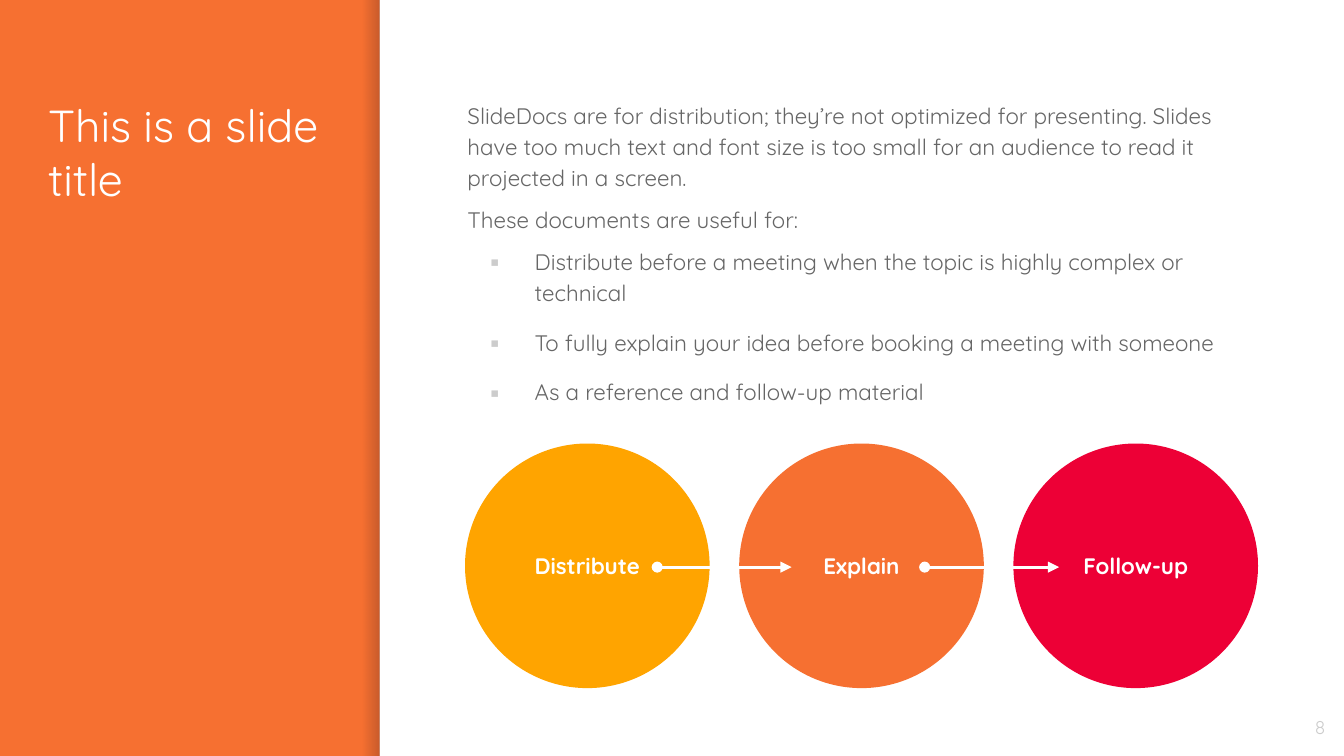
import dataclasses

import lxml.etree
import pptx
import pptx.dml.color
import pptx.enum.shapes
import pptx.enum.text
import pptx.oxml.ns
import pptx.util

EMU_PER_PX = 4572
SLIDE_WIDTH, SLIDE_HEIGHT = 2000, 1125


@dataclasses.dataclass(frozen=True)
class Theme:
    font: str = "Quicksand"
    orange: str = "F67031"
    amber: str = "FFA400"
    red: str = "ED0036"
    white: str = "FFFFFF"
    grey: str = "666666"
    pale: str = "CCCCCC"
    shade: str = "000014"
    title_size: int = 24
    body_size: int = 12
    number_size: int = 10
    line_width: float = 1.5


THEME = Theme()
ALIGN = pptx.enum.text.PP_ALIGN
ANCHOR = pptx.enum.text.MSO_ANCHOR
SHAPE = pptx.enum.shapes.MSO_SHAPE


def px(length):
    return pptx.util.Emu(length * EMU_PER_PX)


def rgb(color):
    return pptx.dml.color.RGBColor.from_string(color)


def add_xml(parent, tag, **attributes):
    element = lxml.etree.SubElement(parent, pptx.oxml.ns.qn(tag))
    for name, value in attributes.items():
        element.set(name, str(value))
    return element


def add_shape(slide, kind, box, color):
    shape = slide.shapes.add_shape(kind, *map(px, box))
    shape.shadow.inherit = False
    shape.line.fill.background()
    shape.fill.solid()
    shape.fill.fore_color.rgb = rgb(color)
    return shape


def prepare_frame(shape, anchor):
    frame = shape.text_frame
    frame.word_wrap = True
    frame.vertical_anchor = anchor
    frame.margin_left = frame.margin_right = px(20)
    frame.margin_top = frame.margin_bottom = px(20)
    return frame


def add_run(paragraph, text, size, color, bold=False):
    run = paragraph.add_run()
    run.text = text
    run.font.name = THEME.font
    run.font.size = pptx.util.Pt(size)
    run.font.bold = bold
    run.font.color.rgb = rgb(color)


def add_text(slide, box, text, size, color, align=ALIGN.LEFT, anchor=ANCHOR.TOP):
    frame = prepare_frame(slide.shapes.add_textbox(*map(px, box)), anchor)
    paragraph = frame.paragraphs[0]
    paragraph.alignment = align
    add_run(paragraph, text, size, color)


def add_bullet(paragraph):
    properties = paragraph._p.get_or_add_pPr()
    properties.set("marL", str(px(100)))
    properties.set("indent", str(px(-66)))
    bullet_color = add_xml(properties, "a:buClr")
    add_xml(bullet_color, "a:srgbClr", val=THEME.pale)
    add_xml(properties, "a:buFont", typeface=THEME.font)
    add_xml(properties, "a:buChar", char="▪")


def add_panel(slide, box):
    left, top, width, height = box
    add_shape(slide, SHAPE.RECTANGLE, box, THEME.white)
    edge = add_shape(slide, SHAPE.RECTANGLE, (left - 25, top, 25, height), THEME.shade)
    edge.fill.gradient()
    edge.fill.gradient_angle = 0
    for stop, opacity in zip(edge.fill.gradient_stops, (0, 20)):
        stop.color.rgb = rgb(THEME.shade)
        color = stop._gs.find(pptx.oxml.ns.qn("a:srgbClr"))
        add_xml(color, "a:alpha", val=opacity * 1000)


def add_body(slide, box, paragraphs):
    frame = prepare_frame(slide.shapes.add_textbox(*map(px, box)), ANCHOR.TOP)
    for index, (text, bulleted, before, after) in enumerate(paragraphs):
        paragraph = frame.add_paragraph() if index else frame.paragraphs[0]
        paragraph.line_spacing = 1.15
        paragraph.space_before = pptx.util.Pt(before)
        paragraph.space_after = pptx.util.Pt(after)
        if bulleted:
            add_bullet(paragraph)
        add_run(paragraph, text, THEME.body_size, THEME.grey)


def add_arrow(slide, left, top, length):
    arrow = slide.shapes.add_connector(
        pptx.enum.shapes.MSO_CONNECTOR.STRAIGHT,
        px(left), px(top), px(left + length), px(top),
    )
    arrow.line.color.rgb = rgb(THEME.white)
    arrow.line.width = pptx.util.Pt(THEME.line_width)
    line = arrow.line._get_or_add_ln()
    add_xml(line, "a:headEnd", type="oval", w="med", len="med")
    add_xml(line, "a:tailEnd", type="triangle", w="med", len="med")
    add_xml(arrow._element.spPr, "a:effectLst")


def add_process(slide, box, steps):
    left, top, width, diameter = box
    pitch = (width - diameter) // (len(steps) - 1)
    for index, (label, color) in enumerate(steps):
        circle_box = (left + index * pitch, top, diameter, diameter)
        circle = add_shape(slide, SHAPE.OVAL, circle_box, color)
        paragraph = prepare_frame(circle, ANCHOR.MIDDLE).paragraphs[0]
        paragraph.alignment = ALIGN.CENTER
        add_run(paragraph, label, THEME.body_size, THEME.white, bold=True)
    for index in range(len(steps) - 1):
        add_arrow(slide, left + 286 + index * 398, top + 184, 200)


def build_slide(presentation):
    slide = presentation.slides.add_slide(presentation.slide_layouts[6])
    slide.background.fill.solid()
    slide.background.fill.fore_color.rgb = rgb(THEME.orange)
    add_panel(slide, (565, 0, SLIDE_WIDTH - 565, SLIDE_HEIGHT))
    add_text(slide, (52, 126, 448, 870), "This is a slide title",
             THEME.title_size, THEME.white)
    add_body(slide, (676, 126, 1224, 604), [
        ("SlideDocs are for distribution; they’re not optimized for presenting. "
         "Slides have too much text and font size is too small for an audience "
         "to read it projected in a screen.", False, 6, 0),
        ("These documents are useful for:", False, 6, 0),
        ("Distribute before a meeting when the topic is highly complex or technical",
         True, 6, 0),
        ("To fully explain your idea before booking a meeting with someone",
         True, 10, 0),
        ("As a reference and follow-up material", True, 10, 10),
    ])
    add_process(slide, (692, 660, 1180, 364), [
        ("Distribute", THEME.amber),
        ("Explain", THEME.orange),
        ("Follow-up", THEME.red),
    ])
    add_text(slide, (1872, 1039, 120, 86), "8", THEME.number_size, THEME.pale,
             ALIGN.RIGHT, ANCHOR.MIDDLE)


def main():
    presentation = pptx.Presentation()
    presentation.slide_width = px(SLIDE_WIDTH)
    presentation.slide_height = px(SLIDE_HEIGHT)
    build_slide(presentation)
    presentation.save("out.pptx")


if __name__ == "__main__":
    main()
